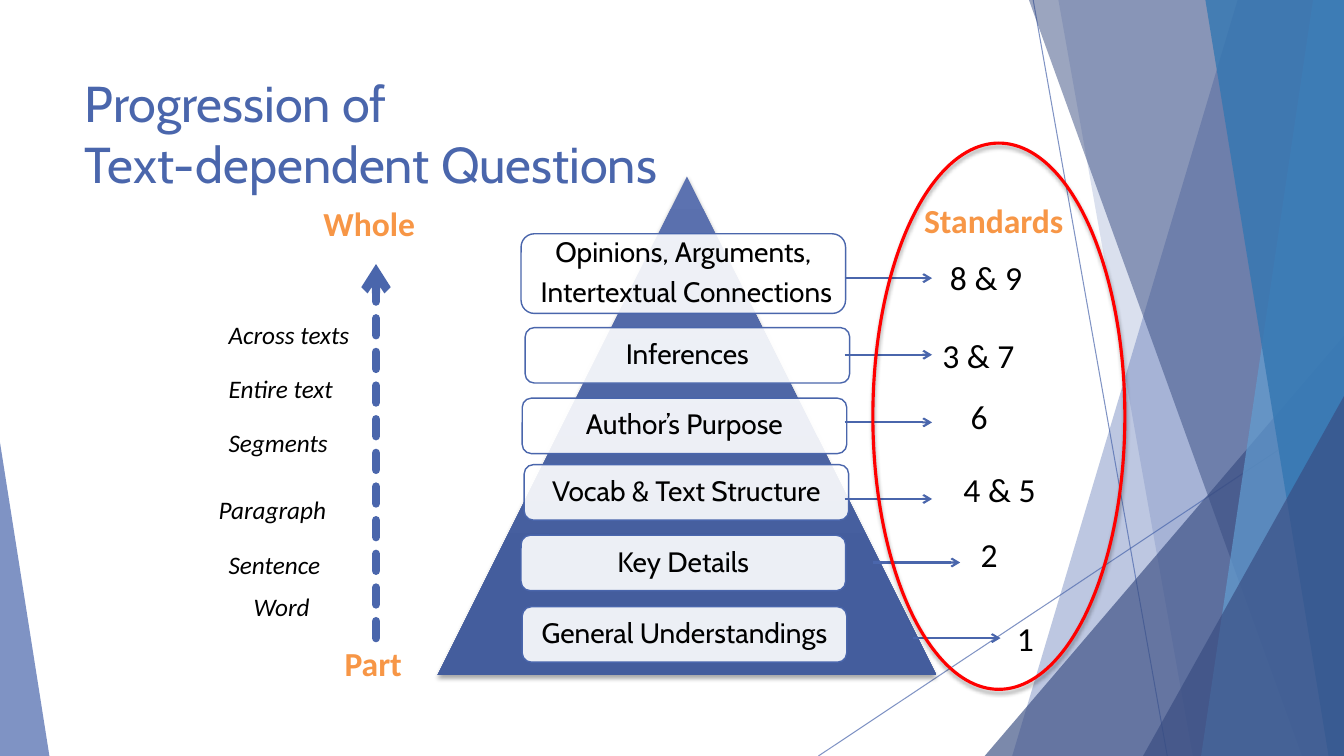
from lxml.etree import SubElement
from pptx import Presentation
from pptx.dml.color import RGBColor
from pptx.enum.dml import MSO_LINE as Dash
from pptx.enum.shapes import MSO_CONNECTOR as Conn, MSO_SHAPE as Kind
from pptx.enum.text import MSO_ANCHOR as Anchor, MSO_AUTO_SIZE as Fit, PP_ALIGN as Align
from pptx.oxml.ns import qn
from pptx.util import Pt

WIDE, HIGH = 960, 540
BLUE, NAVY, BLACK, AMBER = "4A66AC", "384C81", "000000", "F79646"

# top x, bottom x, colour, opacity
BANDS_BACK = [(884.2, 722.9, BLUE, 36), (756, 851.8, BLUE, 20)]
BANDS_FRONT = [(735.1, 929.5, NAVY, 50), (938.2, 858.2, "629DD1", 70),
               (861.1, 949, "3477B2", 80)]

# left, top, height, text
LEVELS = [
    (372.2, 167, 56.9, "Opinions, Arguments,\n Intertextual Connections"),
    (375.1, 234, 39.6, "Inferences"),
    (373, 284.4, 39.6, "Author’s Purpose"),
    (374.4, 331.9, 39.6, "Vocab & Text Structure"),
    (372.2, 382.3, 39.6, "Key Details"),
    (373, 433.4, 39.6, "General Understandings"),
]

# left, top, width, text
SCOPES = [
    (156.2, 224.6, 102, "Across texts"), (156.2, 262.8, 113, "Entire text"),
    (156.2, 301.7, 127, "Segments"), (149, 349.2, 93, "Paragraph"),
    (156.2, 388.8, 82, "Sentence"), (174.2, 419, 56, "Word"),
]
HEADS = [(239, 455.8, 57, "Part"), (223.9, 141.1, 82, "Whole"),
         (653, 139, 117, "Standards")]
NUMBERS = [
    (666, 180, 74, " 8 & 9"), (666, 235.4, 94, "3 & 7"), (686.2, 279.4, 52, "6"),
    (681.1, 331.2, 68, "4 & 5"), (693.4, 378, 58, "2"), (719.3, 437.8, 51, "1"),
]
ARROWS = [(603.4, 198.7), (603.4, 253.4), (603.4, 301.7), (603.4, 356.4),
          (623.5, 401.8), (652.3, 455.8)]


def rgb(code):
    return RGBColor.from_string(code)


def fade(fill, alpha):
    """Make a solid colour partly transparent; fill is its solidFill parent."""
    color = fill.find(qn("a:solidFill"))[0]
    SubElement(color, qn("a:alpha"), val=str(alpha * 1000))


def paint(shape, code, alpha=100):
    """Solid fill, no line, no shadow."""
    shape.shadow.inherit = False
    shape.fill.solid()
    shape.fill.fore_color.rgb = rgb(code)
    shape.line.fill.background()
    if alpha < 100:
        fade(shape.element.spPr, alpha)


def shade(shape):
    """Soft shadow below the shape."""
    shape.shadow.inherit = False
    effects = shape.element.spPr.find(qn("a:effectLst"))
    drop = SubElement(effects, qn("a:outerShdw"), blurRad=str(Pt(3)),
                      dist=str(Pt(2)), dir="5400000", rotWithShape="0")
    SubElement(SubElement(drop, qn("a:srgbClr"), val=BLACK),
               qn("a:alpha"), val="35000")


def stroke(line, code, width):
    line.color.rgb = rgb(code)
    line.width = Pt(width)


def add(slide, kind, *box):
    return slide.shapes.add_shape(kind, *map(Pt, box))


def link(slide, *ends, width):
    line = slide.shapes.add_connector(Conn.STRAIGHT, *map(Pt, ends))
    stroke(line.line, BLUE, width)
    SubElement(line.element.spPr, qn("a:effectLst"))
    return line


def point(line):
    SubElement(line.line._get_or_add_ln(), qn("a:tailEnd"), type="arrow")


def band(slide, top, low, code, alpha):
    """Four-sided panel that runs to the right edge."""
    pen = slide.shapes.build_freeform(top, 0, scale=Pt(1))
    pen.add_line_segments([(WIDE, 0), (WIDE, HIGH), (low, HIGH)], close=True)
    paint(pen.convert_to_shape(), code, alpha)


def wedge(slide, *box, peak, code, alpha):
    shape = add(slide, Kind.ISOSCELES_TRIANGLE, *box)
    shape.adjustments[0] = peak
    paint(shape, code, alpha)


def style(para, size, code, face="Calibri", bold=False, slant=False):
    font = para.font
    font.name, font.size, font.bold, font.italic = face, Pt(size), bold, slant
    font.color.rgb = rgb(code)


def label(slide, left, top, width, text, size=24, code=BLACK, **look):
    box = slide.shapes.add_textbox(Pt(left), Pt(top), Pt(width), Pt(size * 1.5))
    frame = box.text_frame
    frame.word_wrap = True
    frame.text = text
    style(frame.paragraphs[0], size, code, **look)


def level(slide, left, top, height, text):
    shape = add(slide, Kind.ROUNDED_RECTANGLE, left, top, 231.8, height)
    paint(shape, "FFFFFF", 90)
    stroke(shape.line, BLUE, 1)
    frame = shape.text_frame
    frame.word_wrap = True
    frame.vertical_anchor = Anchor.MIDDLE
    frame.margin_left = frame.margin_right = Pt(3)
    frame.text = text
    for para in frame.paragraphs:
        para.alignment = Align.CENTER
        para.line_spacing = 0.9
        para.space_after = Pt(7)
        style(para, 20, BLACK, face="Cabin")


def decorate(slide):
    for ends in [(738, 0, 833.8, HIGH), (WIDE, 290.2, 584.6, HIGH)]:
        line = link(slide, *ends, width=0.75)
        fade(line.line._get_or_add_ln(), 70)
    for item in BANDS_BACK:
        band(slide, *item)
    wedge(slide, 703.4, 239.8, 256.6, 300.2, peak=1, code=NAVY, alpha=66)
    for item in BANDS_FRONT:
        band(slide, *item)
    wedge(slide, 816.5, 283, 143.5, 257, peak=1, code=NAVY, alpha=66)
    wedge(slide, 0, 316.1, 35.3, 223.9, peak=0, code=BLUE, alpha=70)


def head(slide):
    title = slide.shapes.title
    title.left, title.top, title.width, title.height = map(Pt, (53.3, 48.2, 676.8, 103.7))
    frame = title.text_frame
    frame.auto_size = Fit.NONE
    frame.vertical_anchor = Anchor.TOP
    frame.text = "Progression of\vText-dependent Questions"
    para = frame.paragraphs[0]
    para.alignment = Align.LEFT
    style(para, 36, BLUE, face="Cabin")


def pyramid(slide):
    shape = add(slide, Kind.ISOSCELES_TRIANGLE, 312.5, 126, 356.4, 356.4)
    shape.fill.gradient()
    shape.fill.gradient_angle = 270
    stops = [(0, "5C72B0"), (0.78, "445D9D")]
    for stop, (place, code) in zip(shape.fill.gradient_stops, stops):
        stop.position = place
        stop.color.rgb = rgb(code)
    shape.line.fill.background()
    shade(shape)
    for item in LEVELS:
        level(slide, *item)


def main():
    deck = Presentation()
    deck.slide_width, deck.slide_height = Pt(WIDE), Pt(HIGH)
    slide = deck.slides.add_slide(deck.slide_layouts[5])
    decorate(slide)
    head(slide)
    pyramid(slide)

    scale = link(slide, 268.6, 455.8, 268.6, 188.6, width=6)
    scale.line.dash_style = Dash.SQUARE_DOT
    scale.line._get_or_add_ln().set("cap", "rnd")
    point(scale)

    for item in SCOPES:
        label(slide, *item, size=18, slant=True)
    for item in HEADS:
        label(slide, *item, code=AMBER, bold=True)
    for item in NUMBERS:
        label(slide, *item)
    for left, top in ARROWS:
        point(link(slide, left, top, left + 62.4, top, width=1.5))

    ring = add(slide, Kind.OVAL, 623.5, 102.2, 180, 390.2)
    ring.fill.background()
    stroke(ring.line, "FF0000", 2.25)
    shade(ring)
    deck.save("out.pptx")


if __name__ == "__main__":
    main()
